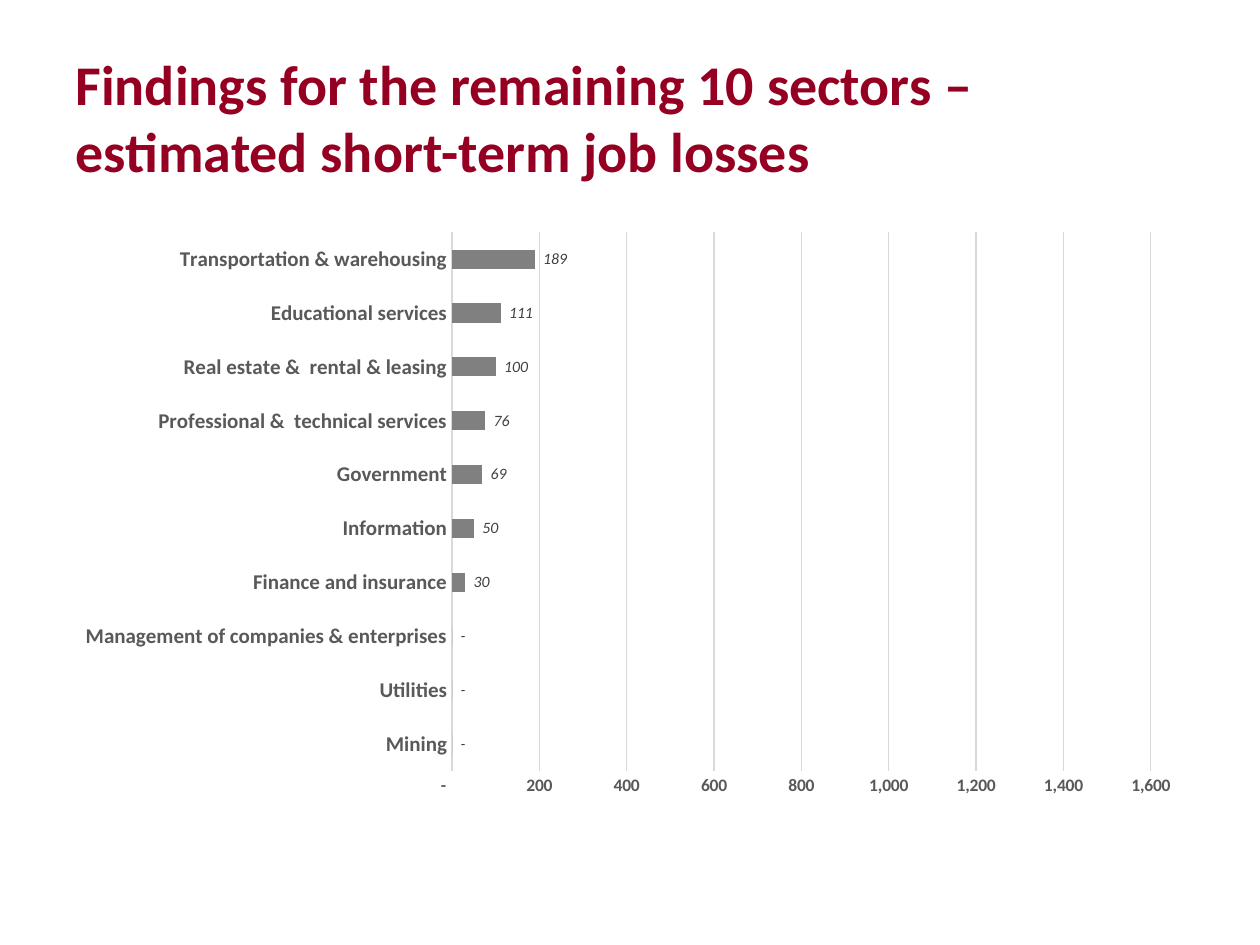
from pptx import Presentation
from pptx.chart.data import CategoryChartData
from pptx.dml.color import RGBColor
from pptx.enum.chart import XL_CHART_TYPE, XL_LABEL_POSITION, XL_TICK_MARK
from pptx.enum.text import MSO_ANCHOR, PP_ALIGN
from pptx.util import Inches, Pt

RED = RGBColor(0x95, 0x00, 0x22)
BLACK = RGBColor(0x00, 0x00, 0x00)
DARK = RGBColor(0x40, 0x40, 0x40)
SLATE = RGBColor(0x59, 0x59, 0x59)
GREY = RGBColor(0x80, 0x80, 0x80)
PALE = RGBColor(0xD9, 0xD9, 0xD9)

COUNT = r'_(* #,##0_);_(* \(#,##0\);_(* "-"??_);_(@_)'
LOSSES = {
    "Mining": 0,
    "Utilities": 0,
    "Management of companies & enterprises": 0,
    "Finance and insurance": 30,
    "Information": 50,
    "Government": 69,
    "Professional &  technical services": 76,
    "Real estate &  rental & leasing": 100,
    "Educational services": 111,
    "Transportation & warehousing": 189,
}


class Deck:
    face = "Calibri"

    def __init__(self):
        self.prs = Presentation()
        self.prs.slide_width = Inches(10)
        self.prs.slide_height = Inches(7.5)
        self.slide = self.prs.slides.add_slide(self.prs.slide_layouts[5])

    def style(self, font, size, color, bold=False, italic=False):
        font.name = self.face
        font.size = Pt(size)
        font.color.rgb = color
        font.bold = bold
        font.italic = italic

    def line(self, form):
        form.line.color.rgb = PALE
        form.line.width = Pt(0.75)

    def title(self, text, left, top, width, height):
        shape = self.slide.shapes.title
        shape.left, shape.top = Inches(left), Inches(top)
        shape.width, shape.height = Inches(width), Inches(height)
        frame = shape.text_frame
        frame.word_wrap = True
        frame.vertical_anchor = MSO_ANCHOR.MIDDLE
        para = frame.paragraphs[0]
        para.alignment = PP_ALIGN.LEFT
        run = para.add_run()
        run.text = text
        self.style(run.font, 32, RED, bold=True)

    def bars(self, name, values, left, top, width, height):
        data = CategoryChartData(number_format=COUNT)
        data.categories = list(values)
        data.add_series(name, list(values.values()))
        chart = self.slide.shapes.add_chart(
            XL_CHART_TYPE.BAR_CLUSTERED, Inches(left), Inches(top),
            Inches(width), Inches(height), data).chart
        chart.has_legend = False
        chart.has_title = False
        self.style(chart.font, 10, BLACK)

        plot = chart.plots[0]
        plot.gap_width = 182
        plot.vary_by_categories = False
        fill = plot.series[0].format.fill
        fill.solid()
        fill.fore_color.rgb = GREY

        plot.has_data_labels = True
        labels = plot.data_labels
        labels.show_value = True
        labels.position = XL_LABEL_POSITION.OUTSIDE_END
        labels.number_format = COUNT
        labels.number_format_is_linked = False
        self.style(labels.font, 9, DARK, italic=True)

        cat, val = chart.category_axis, chart.value_axis
        for axis, size in ((cat, 12), (val, 10)):
            axis.major_tick_mark = XL_TICK_MARK.NONE
            axis.minor_tick_mark = XL_TICK_MARK.NONE
            self.style(axis.tick_labels.font, size, SLATE, bold=True)
        self.line(cat.format)
        val.format.line.fill.background()
        val.minimum_scale = 0
        val.maximum_scale = 1600
        val.major_unit = 200
        val.has_major_gridlines = True
        self.line(val.major_gridlines.format)
        val.tick_labels.number_format = COUNT
        val.tick_labels.number_format_is_linked = False


def main():
    deck = Deck()
    deck.title("Findings for the remaining 10 sectors – "
               "estimated short-term job losses", 0.5, 0.3, 9, 1.25)
    deck.bars("Series 1", LOSSES, 0.5, 1.75, 9, 4.66)
    deck.prs.save("out.pptx")


if __name__ == "__main__":
    main()
